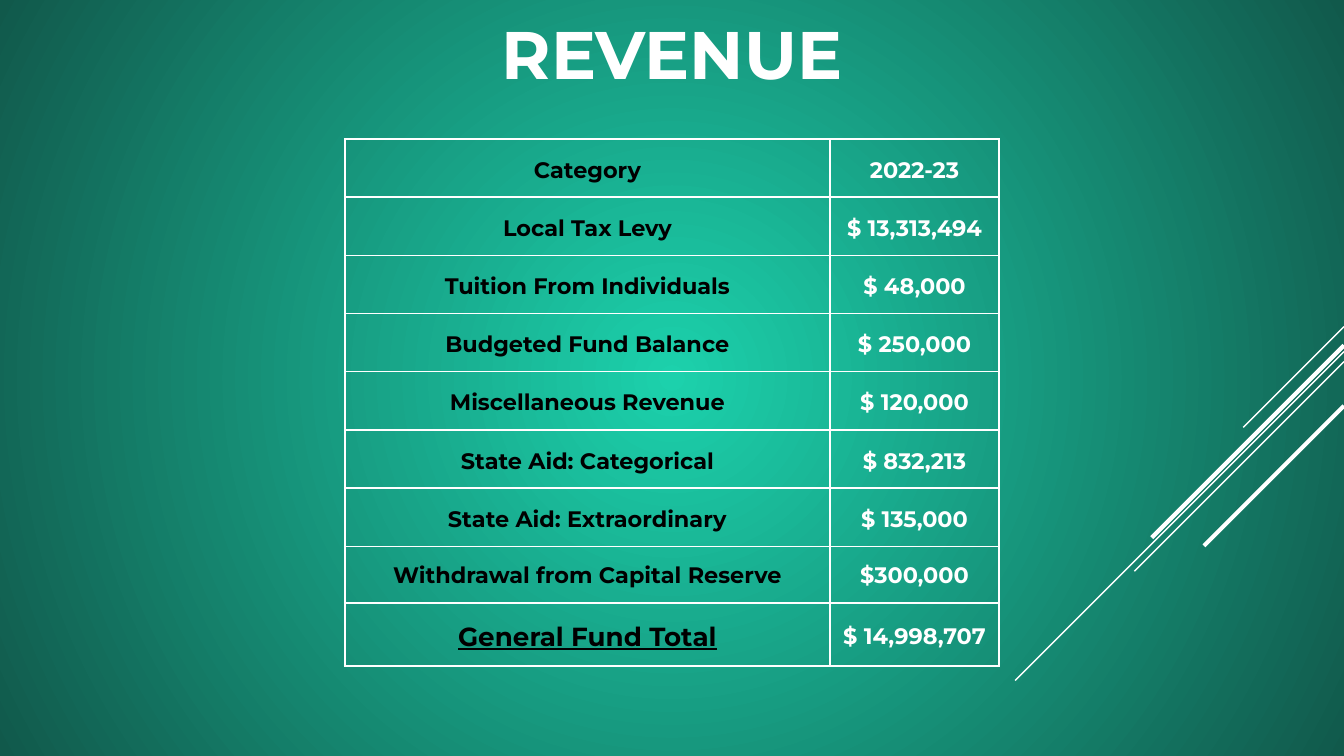
from lxml.etree import SubElement
from pptx import Presentation
from pptx.dml.color import RGBColor
from pptx.enum.text import MSO_ANCHOR, PP_ALIGN
from pptx.oxml import parse_xml
from pptx.oxml.ns import nsdecls, qn
from pptx.util import Pt

WHITE = RGBColor(0xFF, 0xFF, 0xFF)
BLACK = RGBColor(0, 0, 0)
MINT = RGBColor(0x1C, 0xD1, 0xAC)
PINE = RGBColor(0x11, 0x59, 0x4B)
FONT = "Montserrat"

SLIDE_WIDTH, SLIDE_HEIGHT = 720, 405
TITLE = "REVENUE"
REVENUES = [
    ("Category", "2022-23"),
    ("Local Tax Levy", "$ 13,313,494"),
    ("Tuition From Individuals", "$ 48,000"),
    ("Budgeted Fund Balance", "$ 250,000"),
    ("Miscellaneous Revenue", "$ 120,000"),
    ("State Aid: Categorical", "$ 832,213"),
    ("State Aid: Extraordinary", "$ 135,000"),
    ("Withdrawal from Capital Reserve", "$300,000"),
    ("General Fund Total", "$ 14,998,707"),
]
WITHDRAWAL = len(REVENUES) - 2
TOTAL = len(REVENUES) - 1
COLUMN_WIDTHS = (260, 90.5)
ROW_HEIGHTS = [31.2] * WITHDRAWAL + [30.3, 34]
TABLE_LEFT, TABLE_TOP = 184.7, 74.4

# Each stripe: y at the right edge, horizontal run, line weight
STRIPES = [
    (175, 54, 0.75),
    (188.4, 176.2, 0.75),
    (193.7, 112.3, 0.75),
    (185, 103, 2.25),
    (217.4, 75, 2.25),
]


def write(frame, text, size=12, color=WHITE, underline=False, spacing=1.0):
    paragraph = frame.paragraphs[0]
    paragraph.alignment = PP_ALIGN.CENTER
    paragraph.line_spacing = spacing
    run = paragraph.add_run()
    run.text = text
    run.font.name = FONT
    run.font.size = Pt(size)
    run.font.bold = True
    run.font.underline = underline
    run.font.color.rgb = color


def paint_background(slide):
    fill = slide.background.fill
    fill.gradient()
    for stop, position, color in zip(fill.gradient_stops, (0, 1), (MINT, PINE)):
        stop.position = position
        stop.color.rgb = color
    gradient = slide.element.xpath(".//p:bg//a:gradFill")[0]
    gradient.replace(
        gradient.find(qn("a:lin")),
        parse_xml(
            f'<a:path {nsdecls("a")} path="circle">'
            '<a:fillToRect l="50000" t="50000" r="50000" b="50000"/></a:path>'
        ),
    )


def add_stripes(slide):
    for top, run, weight in STRIPES:
        stripe = slide.shapes.add_connector(
            1, Pt(SLIDE_WIDTH), Pt(top), Pt(SLIDE_WIDTH - run), Pt(top + run)
        )
        stripe.line.color.rgb = WHITE
        stripe.line.width = Pt(weight)
        SubElement(stripe.element.spPr, qn("a:effectLst"))


def add_title(slide):
    frame = slide.shapes.add_textbox(Pt(93.6), 0, Pt(532.8), Pt(50)).text_frame
    frame.word_wrap = True
    frame.vertical_anchor = MSO_ANCHOR.BOTTOM
    frame.margin_left = frame.margin_right = 0
    frame.margin_top = frame.margin_bottom = 0
    write(frame, TITLE, size=36)


def format_cell(cell, anchor):
    cell.vertical_anchor = anchor
    cell.margin_left = cell.margin_right = Pt(2.2)
    cell.margin_top = cell.margin_bottom = Pt(7.2)
    cell.fill.background()
    properties = cell._tc.get_or_add_tcPr()
    for index, side in enumerate(("lnL", "lnR", "lnT", "lnB")):
        properties.insert(index, parse_xml(
            f'<a:{side} {nsdecls("a")} w="{Pt(1)}"><a:solidFill>'
            f'<a:srgbClr val="{WHITE}"/></a:solidFill></a:{side}>'
        ))


def add_revenue_table(slide):
    revenue_table = slide.shapes.add_table(
        len(REVENUES), len(COLUMN_WIDTHS), Pt(TABLE_LEFT), Pt(TABLE_TOP),
        Pt(sum(COLUMN_WIDTHS)), Pt(sum(ROW_HEIGHTS)),
    ).table
    revenue_table.first_row = revenue_table.horz_banding = False
    for column, width in zip(revenue_table.columns, COLUMN_WIDTHS):
        column.width = Pt(width)
    for row, height in zip(revenue_table.rows, ROW_HEIGHTS):
        row.height = Pt(height)

    for r, entry in enumerate(REVENUES):
        for c, text in enumerate(entry):
            cell = revenue_table.cell(r, c)
            at_bottom = r == WITHDRAWAL or (r, c) == (0, 0)
            format_cell(cell, MSO_ANCHOR.BOTTOM if at_bottom else MSO_ANCHOR.MIDDLE)
            total_label = (r, c) == (TOTAL, 0)
            write(
                cell.text_frame, text,
                size=14 if total_label else 12,
                color=WHITE if c else BLACK,
                underline=total_label,
                spacing=1.0 if r == WITHDRAWAL else 1.15,
            )


def main():
    presentation = Presentation()
    presentation.slide_width = Pt(SLIDE_WIDTH)
    presentation.slide_height = Pt(SLIDE_HEIGHT)
    slide = presentation.slides.add_slide(presentation.slide_layouts[6])
    paint_background(slide)
    add_stripes(slide)
    add_title(slide)
    add_revenue_table(slide)
    presentation.save("out.pptx")


if __name__ == "__main__":
    main()
